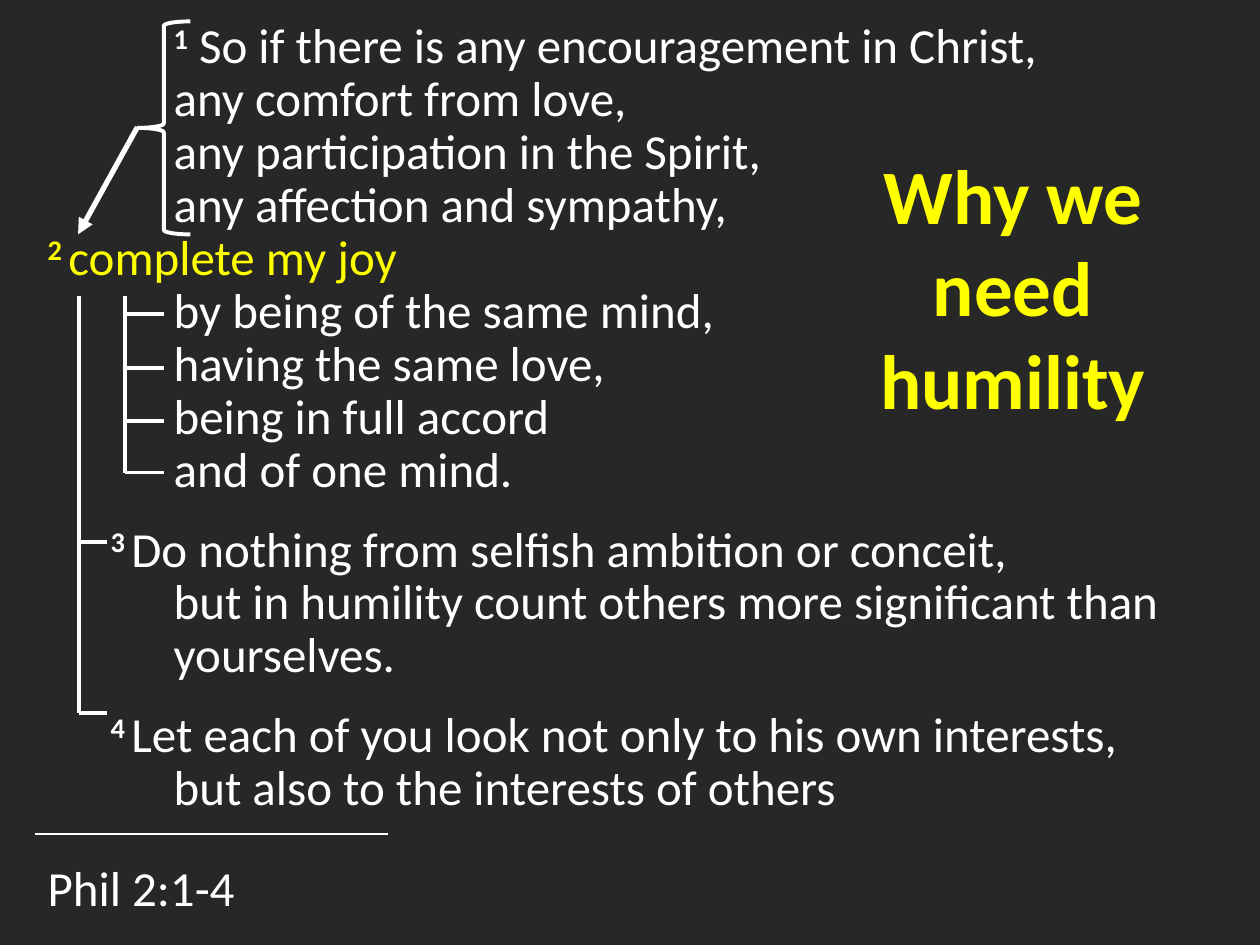
from dataclasses import dataclass

from lxml import etree
from pptx import Presentation
from pptx.dml.color import RGBColor
from pptx.enum.shapes import MSO_CONNECTOR, MSO_SHAPE
from pptx.enum.text import PP_ALIGN
from pptx.oxml.ns import qn
from pptx.util import Emu, Pt

EMU_PER_PX = 9144
STRAIGHT = MSO_CONNECTOR.STRAIGHT
LEFT_BRACE = MSO_SHAPE.LEFT_BRACE
CENTER = PP_ALIGN.CENTER
LEFT = PP_ALIGN.LEFT
CHARCOAL = RGBColor(0x27, 0x27, 0x27)
WHITE = RGBColor(0xFF, 0xFF, 0xFF)
YELLOW = RGBColor(0xFF, 0xFF, 0x00)
FONT = "Calibri"
BODY_SIZE = 28
TITLE_SIZE = 44
VERSE_GAP = 15.4
BRACKET_WEIGHT = 2.25


@dataclass(frozen=True)
class Clause:
    text: str
    indent: int = 100
    verse: str = ""
    color: RGBColor = WHITE
    gap: float = 0


@dataclass(frozen=True)
class Bracket:
    spine: int
    top: int
    tick_end: int
    ticks: tuple[int, ...]


CLAUSES = (
    Clause(" So if there is any encouragement in Christ,", verse="1"),
    Clause("any comfort from love,"),
    Clause("any participation in the Spirit,"),
    Clause("any affection and sympathy, "),
    Clause("complete my joy", indent=0, verse="2 ", color=YELLOW),
    Clause("by being of the same mind,"),
    Clause("having the same love,"),
    Clause("being in full accord"),
    Clause("and of one mind."),
    Clause("Do nothing from selfish ambition or conceit,", indent=50, verse="3 ", gap=VERSE_GAP),
    Clause("but in humility count others more significant than yourselves. "),
    Clause("Let each of you look not only to his own interests,", indent=50, verse="4 ", gap=VERSE_GAP),
    Clause("but also to the interests of others"),
)

BRACKETS = (
    Bracket(spine=99, top=235, tick_end=130, ticks=(249, 292, 334, 375)),
    Bracket(spine=63, top=235, tick_end=85, ticks=(430, 566)),
)


def px(length: int) -> Emu:
    return Emu(length * EMU_PER_PX)


def add_text_frame(slide, left: int, top: int, width: int, height: int):
    frame = slide.shapes.add_textbox(px(left), px(top), px(width), px(height)).text_frame
    frame.word_wrap = True
    return frame


def add_run(paragraph, text: str, size: int, color: RGBColor,
            bold: bool = False, superscript: bool = False) -> None:
    run = paragraph.add_run()
    run.text = text
    run.font.name = FONT
    run.font.size = Pt(size)
    run.font.bold = bold
    run.font.color.rgb = color
    if superscript:
        run._r.get_or_add_rPr().set("baseline", "30000")


def add_clause(paragraph, clause: Clause) -> None:
    properties = paragraph._p.get_or_add_pPr()
    properties.set("marL", str(px(clause.indent)))
    properties.set("indent", "0")
    paragraph.line_spacing = 0.9
    paragraph.space_before = Pt(clause.gap)
    if clause.verse:
        add_run(paragraph, clause.verse, BODY_SIZE, clause.color, bold=True, superscript=True)
    add_run(paragraph, clause.text, BODY_SIZE, clause.color)


def add_passage(slide, clauses: tuple[Clause, ...]) -> None:
    frame = add_text_frame(slide, 28, 12, 952, 715)
    for index, clause in enumerate(clauses):
        add_clause(frame.add_paragraph() if index else frame.paragraphs[0], clause)


def add_caption(slide, text: str, box: tuple[int, int, int, int], size: int,
                color: RGBColor, align: PP_ALIGN, bold: bool = False) -> None:
    paragraph = add_text_frame(slide, *box).paragraphs[0]
    paragraph.alignment = align
    add_run(paragraph, text, size, color, bold)


def add_line(slide, start: tuple[int, int], end: tuple[int, int],
             weight: float = BRACKET_WEIGHT, arrow: bool = False) -> None:
    connector = slide.shapes.add_connector(STRAIGHT, *map(px, start + end))
    connector.line.color.rgb = WHITE
    connector.line.width = Pt(weight)
    if arrow:
        outline = connector.line._get_or_add_ln()
        etree.SubElement(outline, qn("a:tailEnd"), type="triangle")
    etree.SubElement(connector._element.spPr, qn("a:effectLst"))


def add_bracket(slide, bracket: Bracket) -> None:
    add_line(slide, (bracket.spine, bracket.top), (bracket.spine, bracket.ticks[-1]))
    for tick in bracket.ticks:
        add_line(slide, (bracket.tick_end, tick), (bracket.spine, tick))


def add_brace(slide, left: int, top: int, width: int, height: int) -> None:
    brace = slide.shapes.add_shape(LEFT_BRACE, px(left), px(top), px(width), px(height))
    brace.shadow.inherit = False
    brace.fill.background()
    brace.line.color.rgb = WHITE
    brace.line.width = Pt(BRACKET_WEIGHT)


def main() -> None:
    deck = Presentation()
    deck.slide_width = px(1000)
    deck.slide_height = px(750)
    slide = deck.slides.add_slide(deck.slide_layouts[6])
    slide.background.fill.solid()
    slide.background.fill.fore_color.rgb = CHARCOAL

    add_passage(slide, CLAUSES)
    add_brace(slide, 109, 17, 42, 169)
    add_line(slide, (109, 101), (62, 186), weight=3, arrow=True)
    for bracket in BRACKETS:
        add_bracket(slide, bracket)
    add_caption(slide, "Phil 2:1-4", (28, 676, 440, 61), BODY_SIZE, WHITE, LEFT)
    add_line(slide, (28, 662), (308, 662), weight=1.5)
    add_caption(slide, "Why we need humility", (670, 112, 268, 246),
                TITLE_SIZE, YELLOW, CENTER, bold=True)
    deck.save("out.pptx")


if __name__ == "__main__":
    main()
